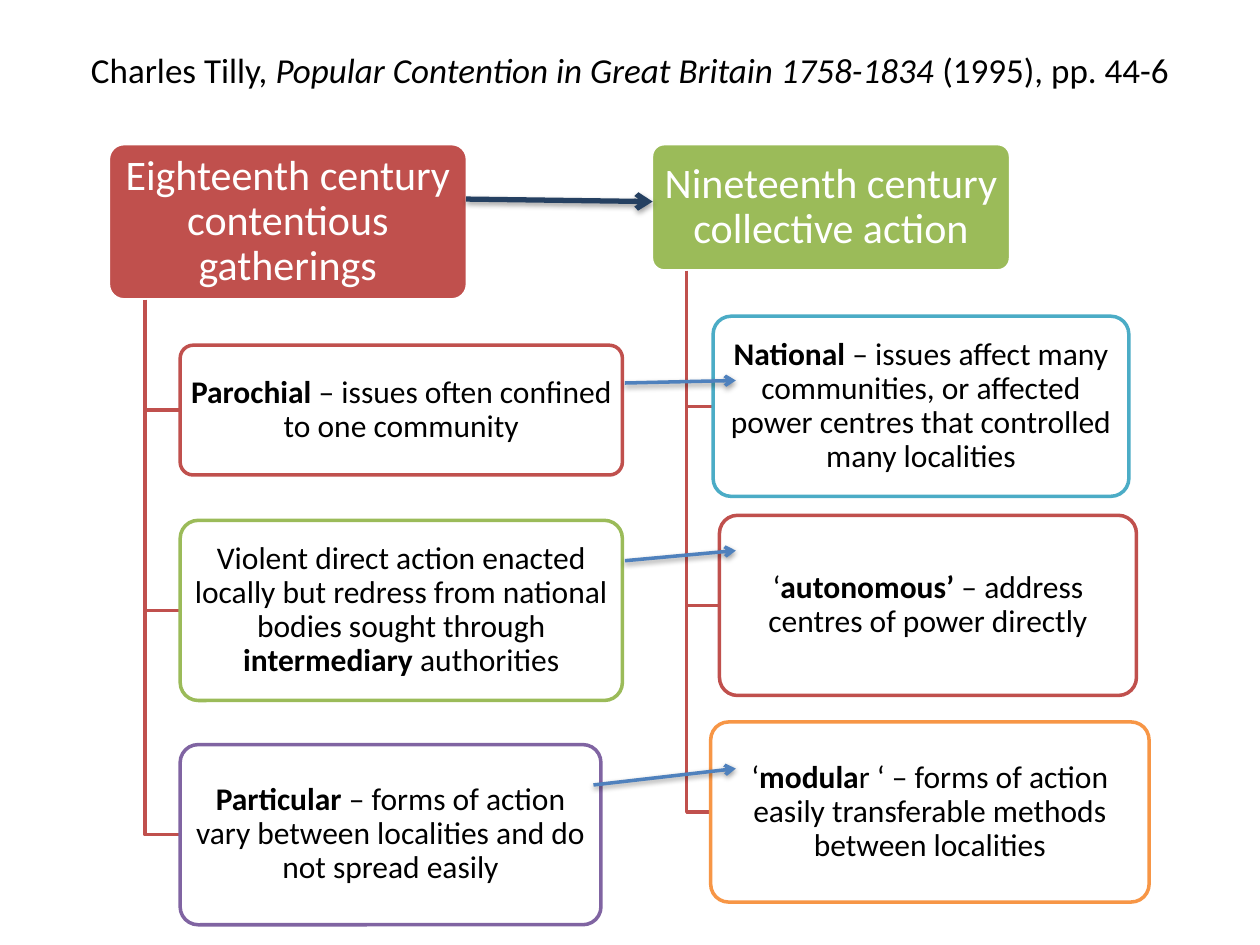
from dataclasses import dataclass

from lxml import etree
from pptx import Presentation
from pptx import util as u
from pptx.dml.color import RGBColor
from pptx.enum import shapes, text
from pptx.oxml import ns

COLUMNS, ROWS = 100, 75  # square grid cells over a 10 x 7.5 inch slide
CELL = u.Inches(10) // COLUMNS
FONT = "Calibri"
COLORS = {
    "white": "FFFFFF", "black": "000000", "red": "C0504D", "green": "9BBB59",
    "purple": "8064A2", "teal": "4BACC6", "orange": "F79646",
    "navy": "254061", "blue": "4F81BD",
}
Runs = list[tuple[str, str]]  # wording and style: "", "b" or "i"


@dataclass
class Card:
    left: float
    top: float
    width: float
    height: float
    color: str
    runs: Runs


@dataclass
class Branch:
    header: Card
    trunk: float
    children: list[Card]


@dataclass
class Arrow:
    start: tuple[float, float]
    end: tuple[float, float]
    color: str = "blue"
    weight: float = 2


BRANCHES = [
    Branch(
        Card(8.6, 11.4, 28.5, 12.4, "red",
             [("Eighteenth century contentious gatherings", "")]),
        11.5,
        [
            Card(14.3, 27.4, 35.1, 10.3, "red",
                 [("Parochial", "b"), (" – issues often confined to one community", "")]),
            Card(14.3, 41.3, 35.1, 14.3, "green",
                 [("Violent direct action enacted locally but redress from national "
                   "bodies sought through ", ""),
                  ("intermediary", "b"), (" authorities", "")]),
            Card(14.3, 59.1, 33.4, 14.3, "purple",
                 [("Particular ", "b"),
                  ("– forms of action vary between localities and do not spread easily", "")]),
        ],
    ),
    Branch(
        Card(51.7, 11.4, 28.5, 10.1, "green",
             [("Nineteenth century collective action", "")]),
        54.5,
        [
            Card(56.6, 25.1, 33, 14.3, "teal",
                 [("National", "b"),
                  (" – issues affect many communities, or affected power centres "
                   "that controlled many localities", "")]),
            Card(57.1, 40.9, 33.1, 14.3, "red",
                 [("‘", ""), ("autonomous’", "b"),
                  (" – address centres of power directly", "")]),
            Card(56.4, 57.3, 34.8, 14.3, "orange",
                 [("‘", ""), ("modula", "b"),
                  ("r ‘ – forms of action easily transferable methods "
                   "between localities", "")]),
        ],
    ),
]
ARROWS = [
    Arrow((37, 15.8), (51.8, 16), "navy", 3),
    Arrow((49.6, 30.4), (58.4, 30.2)),
    Arrow((49.6, 44.5), (58.4, 43.7)),
    Arrow((47.1, 62.3), (58.4, 61)),
]
TITLE: Runs = [
    ("Charles Tilly, ", ""),
    ("Popular Contention in Great Britain 1758-1834 ", "i"),
    ("(1995), pp. 44-6", ""),
]


def cells(*counts: float) -> list[u.Emu]:
    return [u.Emu(round(count * CELL)) for count in counts]


def rgb(name: str) -> RGBColor:
    return RGBColor.from_string(COLORS[name])


def child(parent, tag: str, **attributes):
    return etree.SubElement(parent, ns.qn(tag), attributes)


def write(shape, runs: Runs, *, size: float, color: str = "black",
          spacing: float = 1.0, inset: tuple[float, float] = (1, 0.5)) -> None:
    frame = shape.text_frame
    frame.word_wrap = True
    frame.vertical_anchor = text.MSO_ANCHOR.MIDDLE
    frame.margin_left = frame.margin_right = cells(inset[0])[0]
    frame.margin_top = frame.margin_bottom = cells(inset[1])[0]
    para = frame.paragraphs[0]
    para.alignment = text.PP_ALIGN.CENTER
    para.line_spacing = spacing
    for wording, style in runs:
        span = para.add_run()
        span.text = wording
        span.font.name, span.font.size = FONT, u.Pt(size)
        span.font.bold, span.font.italic = style == "b", style == "i"
        span.font.color.rgb = rgb(color)


def stroke(shape, color: str, weight: float = 2) -> None:
    shape.line.color.rgb = rgb(color)
    shape.line.width = u.Pt(weight)


def draw_card(page, card: Card, *, header: bool = False) -> None:
    box = page.shapes.add_shape(
        shapes.MSO_SHAPE.ROUNDED_RECTANGLE,
        *cells(card.left, card.top, card.width, card.height))
    box.adjustments[0] = 0.1
    box.shadow.inherit = False
    box.fill.solid()
    box.fill.fore_color.rgb = rgb(card.color if header else "white")
    stroke(box, "white" if header else card.color)
    if header:
        write(box, card.runs, size=24, color="white", spacing=0.9, inset=(0.5, 0.3))
    else:
        fill_color = box.fill._xPr.find(".//" + ns.qn("a:srgbClr"))
        child(fill_color, "a:alpha", val="90000")
        write(box, card.runs, size=18, spacing=0.9, inset=(0.4, 0.3))


def draw_elbow(page, branch: Branch, card: Card) -> None:
    """Link the foot of the header to the middle of a child's left edge."""
    foot = branch.header.top + branch.header.height
    middle = card.top + card.height / 2
    builder = page.shapes.build_freeform(*cells(branch.trunk, foot))
    builder.add_line_segments(
        [cells(branch.trunk, middle), cells(card.left, middle)], close=False)
    elbow = builder.convert_to_shape()
    elbow.fill.background()
    elbow.shadow.inherit = False
    stroke(elbow, "red")


def draw_arrow(page, arrow: Arrow) -> None:
    line = page.shapes.add_connector(
        shapes.MSO_CONNECTOR.STRAIGHT, *cells(*arrow.start, *arrow.end))
    stroke(line, arrow.color, arrow.weight)
    child(line.line._get_or_add_ln(), "a:tailEnd", type="arrow")
    effects = child(line._element.spPr, "a:effectLst")
    shadow = child(effects, "a:outerShdw", blurRad="40000", dist="20000",
                   dir="5400000", rotWithShape="0")
    shade = child(shadow, "a:srgbClr", val=COLORS["black"])
    child(shade, "a:alpha", val="38000")


def main() -> None:
    deck = Presentation()
    deck.slide_width, deck.slide_height = cells(COLUMNS, ROWS)
    page = deck.slides.add_slide(deck.slide_layouts[6])
    write(page.shapes.add_textbox(*cells(5, 3, 90, 5.1)), TITLE, size=20)
    for branch in BRANCHES:
        draw_card(page, branch.header, header=True)
        for card in branch.children:
            draw_elbow(page, branch, card)
            draw_card(page, card)
    for arrow in ARROWS:
        draw_arrow(page, arrow)
    deck.save("out.pptx")


if __name__ == "__main__":
    main()
